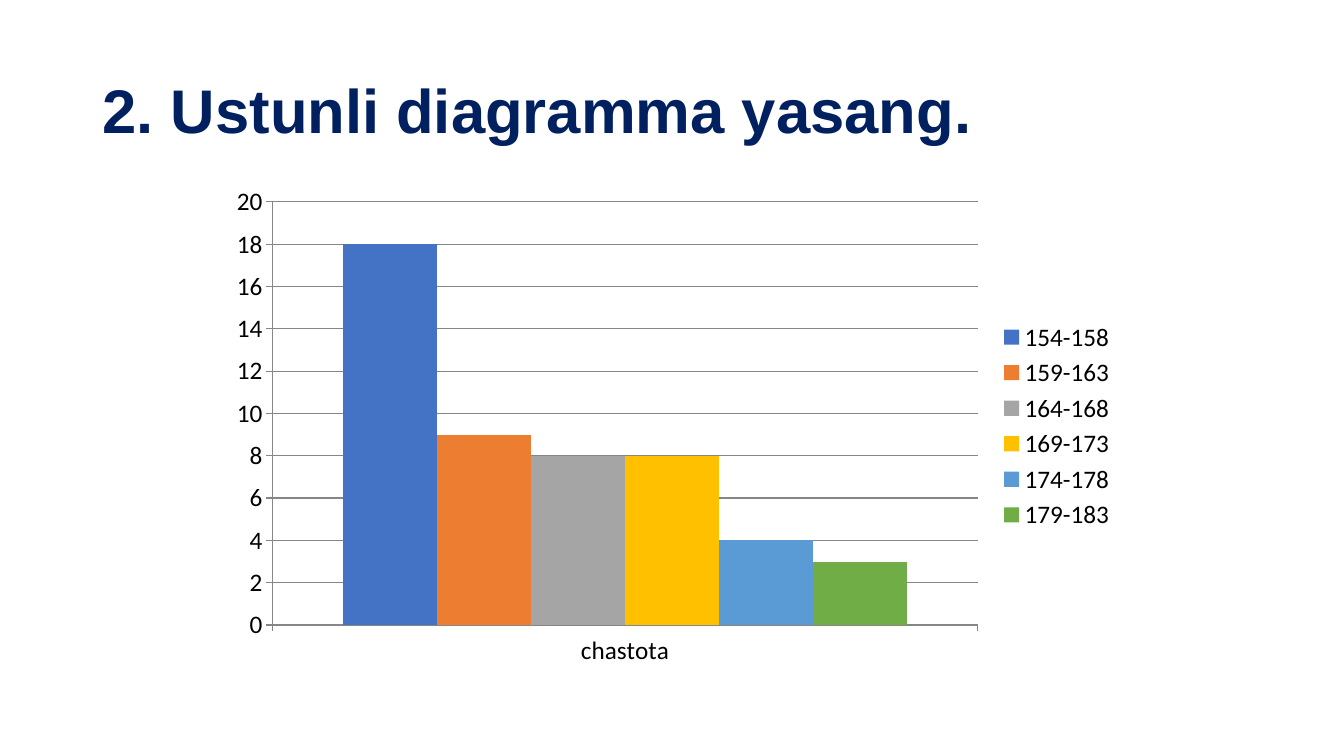
from pptx import Presentation
from pptx.chart.data import CategoryChartData
from pptx.dml.color import RGBColor
from pptx.enum.chart import XL_CHART_TYPE as ChartType, XL_LEGEND_POSITION as LegendPosition, XL_TICK_MARK as TickMark
from pptx.enum.text import MSO_ANCHOR, PP_ALIGN
from pptx.util import Cm, Pt

NAVY = RGBColor(0x00, 0x20, 0x60)
BLACK = RGBColor(0x00, 0x00, 0x00)
GREY = RGBColor(0x86, 0x86, 0x86)
HEIGHT_GROUPS = [
    ("154-158", 18, RGBColor(0x44, 0x72, 0xC4)),
    ("159-163", 9, RGBColor(0xED, 0x7D, 0x31)),
    ("164-168", 8, RGBColor(0xA5, 0xA5, 0xA5)),
    ("169-173", 8, RGBColor(0xFF, 0xC0, 0x00)),
    ("174-178", 4, RGBColor(0x5B, 0x9B, 0xD5)),
    ("179-183", 3, RGBColor(0x70, 0xAD, 0x47)),
]


def write_text(frame, text, *, font, size, color, bold=False, spacing=1.0):
    frame.word_wrap = True
    frame.vertical_anchor = MSO_ANCHOR.MIDDLE
    paragraph = frame.paragraphs[0]
    paragraph.alignment = PP_ALIGN.LEFT
    paragraph.line_spacing = spacing
    run = paragraph.add_run()
    run.text = text
    run.font.name = font
    run.font.size = Pt(size)
    run.font.bold = bold
    run.font.color.rgb = color


deck = Presentation()
deck.slide_width = Cm(33.87)
deck.slide_height = Cm(19.05)
slide = deck.slides.add_slide(deck.slide_layouts[5])

heading = slide.shapes.title
heading.left, heading.top, heading.width, heading.height = Cm(2.33), Cm(1.01), Cm(29.21), Cm(3.68)
write_text(heading.text_frame, "2. Ustunli diagramma yasang.",
           font="Arial", size=44, color=NAVY, bold=True, spacing=0.9)

frequencies = CategoryChartData()
frequencies.categories = ["chastota"]
for group, count, _ in HEIGHT_GROUPS:
    frequencies.add_series(group, [count])

histogram = slide.shapes.add_chart(
    ChartType.COLUMN_CLUSTERED, Cm(5.51), Cm(4.45), Cm(22.86), Cm(12.57), frequencies).chart
histogram.has_title = False
histogram.font.name = "Calibri"
histogram.font.size = Pt(18)
histogram.font.color.rgb = BLACK
histogram.has_legend = True
histogram.legend.position = LegendPosition.RIGHT
histogram.legend.include_in_layout = False

columns = histogram.plots[0]
columns.gap_width = 150
columns.overlap = 0
columns.vary_by_categories = False
for column, (_, _, color) in zip(columns.series, HEIGHT_GROUPS):
    column.format.fill.solid()
    column.format.fill.fore_color.rgb = color

for axis in (histogram.category_axis, histogram.value_axis):
    axis.major_tick_mark = TickMark.OUTSIDE
    axis.minor_tick_mark = TickMark.NONE
    axis.format.line.color.rgb = GREY
    axis.format.line.width = Pt(0.75)

counts = histogram.value_axis
counts.minimum_scale = 0
counts.maximum_scale = 20
counts.major_unit = 2
counts.has_major_gridlines = True
counts.major_gridlines.format.line.color.rgb = GREY
counts.major_gridlines.format.line.width = Pt(0.75)

deck.save("out.pptx")
